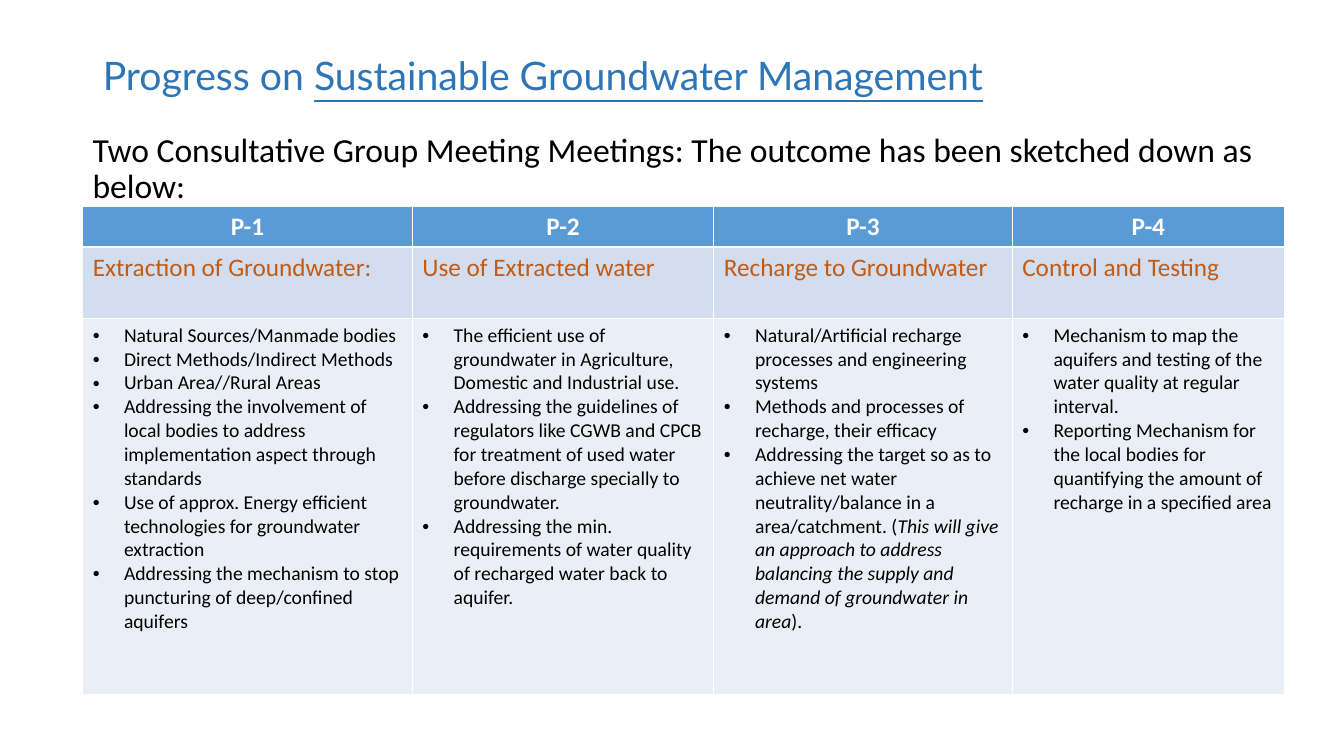
"""Build the slide on progress in sustainable groundwater management."""
from dataclasses import dataclass

from lxml import etree
from pptx import Presentation
from pptx.dml.color import RGBColor
from pptx.enum.text import MSO_ANCHOR, MSO_AUTO_SIZE, PP_ALIGN
from pptx.oxml.ns import qn
from pptx.util import Inches, Pt

LEFT = PP_ALIGN.LEFT
CENTER = PP_ALIGN.CENTER
MIDDLE = MSO_ANCHOR.MIDDLE
NO_AUTOFIT = MSO_AUTO_SIZE.NONE
TITLE_ONLY = 5


@dataclass(frozen=True)
class Theme:
    """Colours, fonts and type sizes of the slide."""
    title_font: str = "Lato"
    body_font: str = "Calibri"
    title_size: int = 28
    intro_size: int = 24
    heading_size: int = 18
    bullet_size: int = 14
    title: str = "2E75B6"
    text: str = "000000"
    header_text: str = "FFFFFF"
    topic_text: str = "C55A11"
    header_fill: str = "5B9BD5"
    topic_fill: str = "D2DEEF"
    detail_fill: str = "EAEFF7"


THEME = Theme()
INTRO = "Two Consultative Group Meeting Meetings: The outcome has been sketched down as below:"
COLUMN_WIDTHS = (3.27, 2.99, 2.96, 2.7)
ROW_HEIGHTS = (0.39, 0.71, 3.73)
ITALIC_MARK = "*"
PILLARS = (
    ("P-1", "Extraction of Groundwater:", (
        "Natural Sources/Manmade bodies",
        "Direct Methods/Indirect Methods",
        "Urban Area//Rural Areas",
        "Addressing the involvement of local bodies to address implementation aspect through standards",
        "Use of approx. Energy efficient technologies for groundwater extraction",
        "Addressing the mechanism to stop puncturing of deep/confined aquifers",
    )),
    ("P-2", "Use of Extracted water", (
        "The efficient use of groundwater in Agriculture, Domestic and Industrial use.",
        "Addressing the guidelines of regulators like CGWB and CPCB for treatment of used water "
        "before discharge specially to groundwater.",
        "Addressing the min. requirements of water quality of recharged water back to aquifer.",
    )),
    ("P-3", "Recharge to Groundwater", (
        "Natural/Artificial recharge processes and engineering systems",
        "Methods and processes of recharge, their efficacy",
        "Addressing the target so as to achieve net water neutrality/balance in a area/catchment. "
        "(*This will give an approach to address balancing the supply and demand of groundwater "
        "in area*).",
    )),
    ("P-4", "Control and Testing", (
        "Mechanism to map the aquifers and testing of the water quality at regular interval.",
        "Reporting Mechanism for the local bodies for quantifying the amount of recharge "
        "in a specified area",
    )),
)


def style_span(span, size, color, font=THEME.body_font, bold=False):
    """Set the font, size, colour and weight of one run."""
    span.font.name = font
    span.font.size = Pt(size)
    span.font.bold = bold
    span.font.color.rgb = RGBColor.from_string(color)


def add_title(page):
    """Place the title and underline its subject."""
    title = page.shapes.title
    title.left, title.top = Inches(0.92), Inches(0.4)
    title.width, title.height = Inches(11.5), Inches(0.75)
    frame = title.text_frame
    frame.auto_size = NO_AUTOFIT
    frame.vertical_anchor = MIDDLE
    para = frame.paragraphs[0]
    para.alignment = LEFT
    para.line_spacing = 0.9
    for text, underline in (("Progress on ", False), ("Sustainable Groundwater Management", True)):
        span = para.add_run()
        span.text = text
        style_span(span, THEME.title_size, THEME.title, THEME.title_font)
        span.font.underline = underline


def add_intro(page):
    """Add the sentence that leads into the table."""
    box = page.shapes.add_textbox(Inches(0.82), Inches(1.27), Inches(11.92), Inches(0.78))
    frame = box.text_frame
    frame.word_wrap = True
    frame.text = INTRO
    para = frame.paragraphs[0]
    para.line_spacing = 0.9
    para.space_before = Pt(10)
    style_span(para.runs[0], THEME.intro_size, THEME.text)


def fill_cell(cell, color):
    """Give a cell a solid background."""
    cell.fill.solid()
    cell.fill.fore_color.rgb = RGBColor.from_string(color)


def add_heading(cell, text, color, fill, alignment=LEFT, bold=False):
    """Write a one-line heading into a cell."""
    fill_cell(cell, fill)
    cell.text_frame.text = text
    para = cell.text_frame.paragraphs[0]
    para.alignment = alignment
    style_span(para.runs[0], THEME.heading_size, color, bold=bold)


def set_bullet(para):
    """Give a paragraph a hanging bullet."""
    properties = para._p.get_or_add_pPr()
    properties.set("marL", str(Inches(0.31)))
    properties.set("indent", str(-Inches(0.31)))
    etree.SubElement(properties, qn("a:buFont")).set("typeface", "Arial")
    etree.SubElement(properties, qn("a:buChar")).set("char", "•")


def add_bullets(cell, items):
    """Write a bullet list, with marked passages in italics."""
    fill_cell(cell, THEME.detail_fill)
    frame = cell.text_frame
    for index, item in enumerate(items):
        para = frame.add_paragraph() if index else frame.paragraphs[0]
        set_bullet(para)
        for part, text in enumerate(item.split(ITALIC_MARK)):
            span = para.add_run()
            span.text = text
            style_span(span, THEME.bullet_size, THEME.text)
            span.font.italic = part % 2 == 1


def add_pillar_table(page):
    """Add the table with one column for each pillar."""
    table = page.shapes.add_table(
        len(ROW_HEIGHTS), len(PILLARS), Inches(0.82), Inches(2.05),
        Inches(sum(COLUMN_WIDTHS)), Inches(sum(ROW_HEIGHTS))).table
    for row, height in zip(table.rows, ROW_HEIGHTS):
        row.height = Inches(height)
    for index, (code, topic, items) in enumerate(PILLARS):
        table.columns[index].width = Inches(COLUMN_WIDTHS[index])
        add_heading(table.cell(0, index), code, THEME.header_text, THEME.header_fill, CENTER, True)
        add_heading(table.cell(1, index), topic, THEME.topic_text, THEME.topic_fill)
        add_bullets(table.cell(2, index), items)


def main():
    """Build and save the deck."""
    deck = Presentation()
    deck.slide_width, deck.slide_height = Inches(13.33), Inches(7.5)
    page = deck.slides.add_slide(deck.slide_layouts[TITLE_ONLY])
    add_title(page)
    add_intro(page)
    add_pillar_table(page)
    deck.save("out.pptx")


if __name__ == "__main__":
    main()
